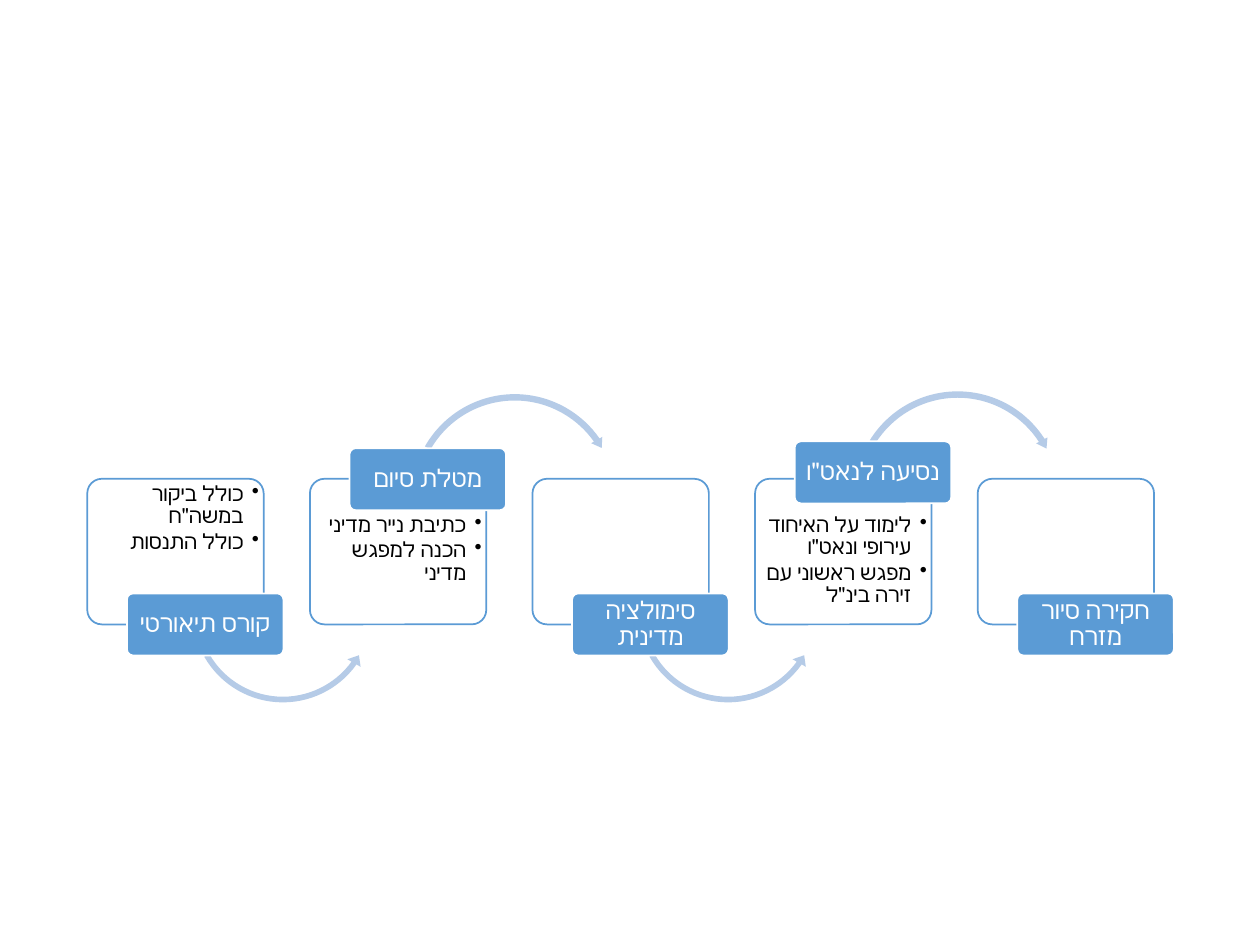
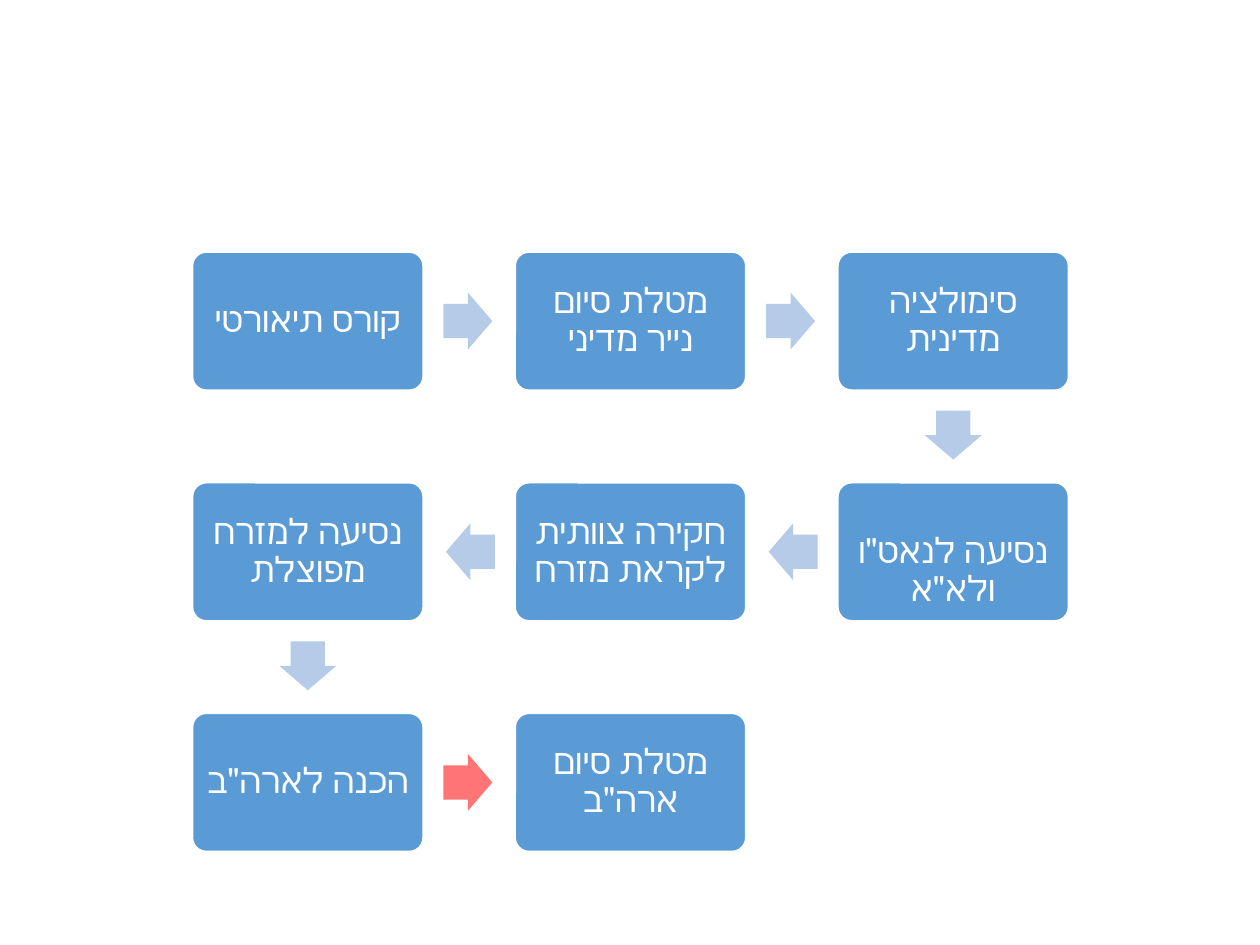
from itertools import zip_longest

from lxml import etree
from pptx import Presentation
from pptx.dml.color import RGBColor
from pptx.enum.lang import MSO_LANGUAGE_ID
from pptx.enum.shapes import MSO_SHAPE
from pptx.enum.text import MSO_ANCHOR, PP_ALIGN
from pptx.oxml.ns import qn
from pptx.util import Pt

ROUNDED = MSO_SHAPE.ROUNDED_RECTANGLE
RIGHT_ARROW = MSO_SHAPE.RIGHT_ARROW
ARC_OVER = MSO_SHAPE.CIRCULAR_ARROW
ARC_UNDER = MSO_SHAPE.LEFT_CIRCULAR_ARROW
TOP, MIDDLE = MSO_ANCHOR.TOP, MSO_ANCHOR.MIDDLE
RIGHT, CENTER = PP_ALIGN.RIGHT, PP_ALIGN.CENTER
HEBREW = MSO_LANGUAGE_ID.HEBREW

BLUE = RGBColor(0x5B, 0x9B, 0xD5)
PALE_BLUE = RGBColor(0xB5, 0xCB, 0xE7)
RED = RGBColor(0xFF, 0x00, 0x00)
WHITE = RGBColor(0xFF, 0xFF, 0xFF)
BLACK = RGBColor(0x00, 0x00, 0x00)
FONT = "Calibri"

UNDER = (ARC_UNDER, (0.03, 3.63, 21.38, 90.25, 0.04), 57.4, 21.8, 108.7)
OVER_SECOND = (ARC_OVER, (0.03, 3.22, 195.02, 125.76, 0.03), 56.2, -50.2, 121.7)
OVER_FOURTH = (ARC_OVER, (0.03, 3.23, 196.32, 127.05, 0.03), 54.9, -51.8, 121.7)
LOW = 65.5

STAGES = [
    ("קורס תיאורטי", ["כולל ביקור במשה\"ח", "כולל התנסות"], LOW, UNDER),
    ("מטלת סיום", ["כתיבת נייר מדיני", "הכנה למפגש מדיני"], -17.5, OVER_SECOND),
    ("סימולציה מדינית", [], LOW, UNDER),
    ("נסיעה לנאט\"ו",
     ["לימוד על האיחוד עירופי ונאט\"ו", "מפגש ראשוני עם זירה בינ\"ל"],
     -21.4, OVER_FOURTH),
    ("חקירה סיור מזרח", [], LOW, None),
]

STEPS = [
    ("קורס תיאורטי", 0, 0),
    ("מטלת סיום נייר מדיני", 1, 0),
    ("סימולציה מדינית", 2, 0),
    ("נסיעה לנאט\"ו ולא\"א", 2, 1),
    ("חקירה צוותית לקראת מזרח", 1, 1),
    ("נסיעה למזרח מפוצלת", 0, 1),
    ("הכנה לארה\"ב", 0, 2),
    ("מטלת סיום ארה\"ב", 1, 2),
]
LOWERED_STEP = 3
RED_ARROW_STEP = 6


def add_block(page, kind, box, fill, line=None, adjustments=()):
    shape = page.shapes.add_shape(kind, *(Pt(length) for length in box))
    shape.shadow.inherit = False
    shape.fill.solid()
    shape.fill.fore_color.rgb = fill
    if line is None:
        shape.line.fill.background()
    else:
        shape.line.color.rgb = line
        shape.line.width = Pt(1)
    for index, value in enumerate(adjustments):
        shape.adjustments[index] = value
    return shape


def write_text(shape, texts, size, color, side, top, bottom, bulleted=False):
    frame = shape.text_frame
    frame.word_wrap = True
    frame.vertical_anchor = TOP if bulleted else MIDDLE
    frame.margin_left = frame.margin_right = Pt(side)
    frame.margin_top, frame.margin_bottom = Pt(top), Pt(bottom)
    for index, text in enumerate(texts):
        para = frame.add_paragraph() if index else frame.paragraphs[0]
        span = para.add_run()
        span.text = text
        span.font.language_id = HEBREW
        para.alignment = RIGHT if bulleted else CENTER
        para.line_spacing = 0.9
        properties = para._p.get_or_add_pPr()
        properties.set("rtl", "1")
        if bulleted:
            para.level = 1
            para.space_after = Pt(1.5)
            properties.set("marL", str(Pt(9)))
            properties.set("indent", str(Pt(-9)))
            etree.SubElement(properties, qn("a:buChar"), char="•")
        para.font.size = Pt(size)
        para.font.color.rgb = color
        para.font.name = FONT


def add_stage(page, left, top, title, points, label_offset, arc):
    card = add_block(page, ROUNDED, (left, top, 100.8, 83.2), WHITE, BLUE, [0.1])
    if points:
        text_top = 0 if label_offset == LOW else 17.8
        write_text(card, points, 12, BLACK, 0, text_top, 0, bulleted=True)
    if arc:
        kind, adjustments, across, down, size = arc
        add_block(page, kind, (left + across, top + down, size, size),
                  PALE_BLUE, adjustments=adjustments)
    label_box = (left + 22.6, top + label_offset, 89.5, 35.5)
    label = add_block(page, ROUNDED, label_box, BLUE, WHITE, [0.1])
    write_text(label, [title], 14, WHITE, 1, 0.5, 0.5)


def draw_stages(page, left, top):
    pitch = 127.2
    for index, stage in enumerate(STAGES):
        add_stage(page, left + index * pitch, top, *stage)


def add_step_arrow(page, center_x, center_y, rotation, color):
    width, height = 28, 32.6
    arrow = add_block(page, RIGHT_ARROW,
                      (center_x - width / 2, center_y - height / 2, width, height),
                      color, adjustments=[0.6, 0.5])
    arrow.rotation = rotation
    if color == RED:
        tint = arrow._element.spPr.find(qn("a:solidFill"))[0]
        etree.SubElement(tint, qn("a:alpha"), val="54000")


def draw_steps(page, left, top):
    width, height = 131.8, 79
    pitch_x, pitch_y = 184.4, 131.8
    pull_back = 0.75
    rotations = {(1, 0): 0, (0, 1): 90, (-1, 0): 180}
    for index, (step, following) in enumerate(zip_longest(STEPS, STEPS[1:])):
        text, column, row = step
        x, y = left + column * pitch_x, top + row * pitch_y
        block = add_block(page, ROUNDED, (x, y, width, height), BLUE, WHITE, [0.1])
        text_top = 25.2 if index == LOWERED_STEP else 3.5
        write_text(block, [text], 20, WHITE, 5.3, text_top, 3.5)
        if following:
            across, down = following[1] - column, following[2] - row
            add_step_arrow(page,
                           x + width / 2 + across * (pitch_x / 2 - pull_back),
                           y + height / 2 + down * (pitch_y / 2 - pull_back),
                           rotations[across, down],
                           RED if index == RED_ARROW_STEP else PALE_BLUE)


def main():
    deck = Presentation()
    deck.slide_width, deck.slide_height = Pt(720), Pt(540)
    blank = deck.slide_layouts[6]
    draw_stages(deck.slides.add_slide(blank), 49.9, 273.6)
    draw_steps(deck.slides.add_slide(blank), 110, 144)
    deck.save("out.pptx")


if __name__ == "__main__":
    main()
